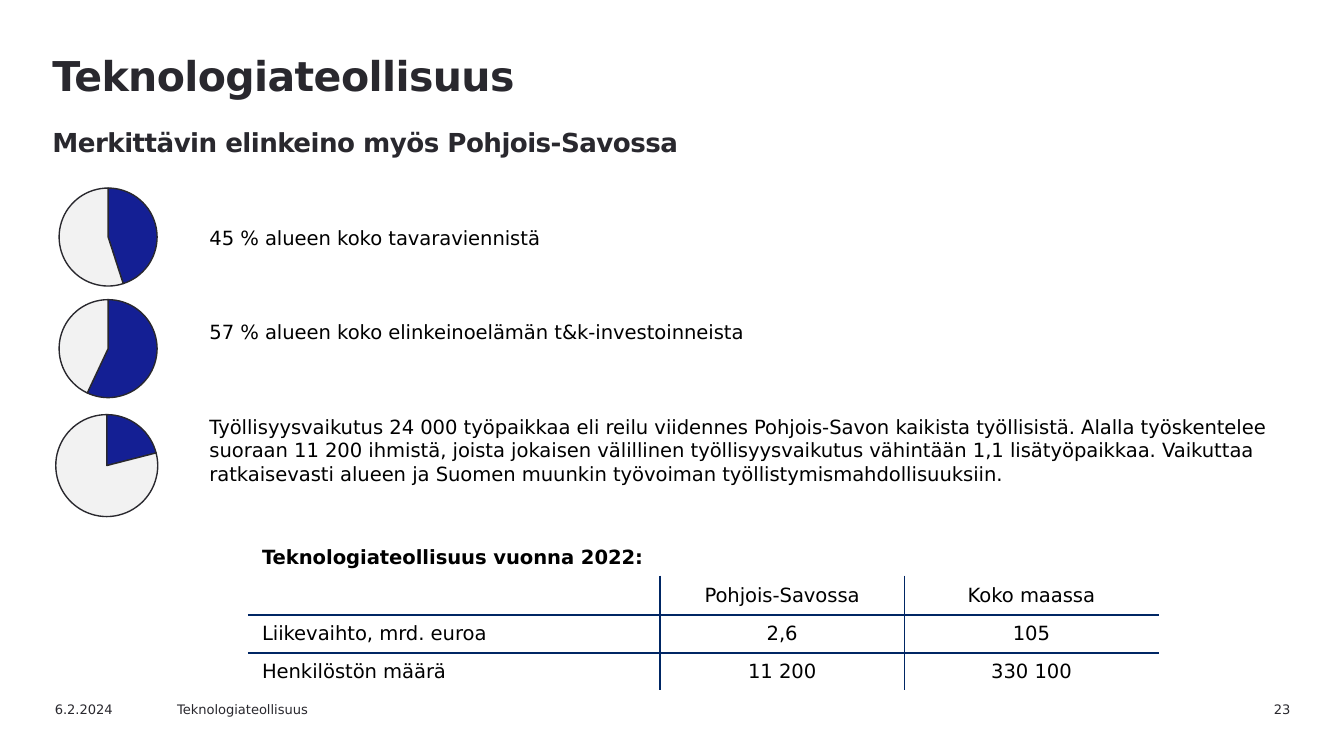
from lxml import etree
from pptx import Presentation
from pptx.chart.data import CategoryChartData as ChartData
from pptx.dml.color import RGBColor
from pptx.enum.chart import XL_CHART_TYPE as CT
from pptx.enum.text import MSO_ANCHOR as ANCHOR, MSO_AUTO_SIZE as FIT, PP_ALIGN as ALIGN
from pptx.oxml import parse_xml
from pptx.oxml.ns import nsdecls, qn
from pptx.util import Inches, Pt

FONT = "DejaVu Sans"
INK = RGBColor(0x29, 0x28, 0x2E)
BLACK = RGBColor(0x00, 0x00, 0x00)
BLUE = RGBColor(0x14, 0x1F, 0x94)
PALE = RGBColor(0xF2, 0xF2, 0xF2)
RULE = RGBColor(0x00, 0x26, 0x64)

W = Inches(10)
H = W * 9 // 16
COL, ROW = W / 100, H / 56.25

HEADING = [("Teknologiateollisuus", 22), ("Merkittävin elinkeino myös Pohjois-Savossa", 14)]
FACTS = [
    "45 % alueen koko tavaraviennistä",
    "57 % alueen koko elinkeinoelämän t&k-investoinneista",
    "Työllisyysvaikutus 24 000 työpaikkaa eli reilu viidennes Pohjois-Savon kaikista "
    "työllisistä. Alalla työskentelee suoraan 11 200 ihmistä, joista jokaisen välillinen "
    "työllisyysvaikutus vähintään 1,1 lisätyöpaikkaa. Vaikuttaa ratkaisevasti alueen ja "
    "Suomen muunkin työvoiman työllistymismahdollisuuksiin.",
]
PIES = [(45, (3.1, 12.6, 10, 10)), (57, (3.1, 20.9, 10, 10)), (21, (2.8, 29.4, 10.4, 10.4))]
FIGURES = [
    ["Teknologiateollisuus vuonna 2022:", "", ""],
    ["", "Pohjois-Savossa", "Koko maassa"],
    ["Liikevaihto, mrd. euroa", "2,6", "105"],
    ["Henkilöstön määrä", "11 200", "330 100"],
]
FOOTER = [
    ("6.2.2024", 0, 10, ALIGN.LEFT),
    ("Teknologiateollisuus", 9.1, 14.2, ALIGN.LEFT),
    ("23", 84.5, 9.4, ALIGN.RIGHT),
]


def grid(x, y, w, h):
    return int(x * COL), int(y * ROW), int(w * COL), int(h * ROW)


def set_font(font, size, color, bold=False):
    values = {"name": FONT, "size": Pt(size), "bold": bold}
    for key, value in values.items():
        setattr(font, key, value)
    font.color.rgb = color


def add_run(p, text, *style):
    r = p.add_run()
    r.text = text
    set_font(r.font, *style)
    return r


def add_heading(slide, box):
    sp = slide.shapes.title
    for key, value in zip(("left", "top", "width", "height"), grid(*box)):
        setattr(sp, key, value)
    tf = sp.text_frame
    values = {"margin_left": 0, "margin_top": 0, "margin_right": 0, "margin_bottom": 0,
              "word_wrap": True, "auto_size": FIT.NONE, "vertical_anchor": ANCHOR.TOP}
    for key, value in values.items():
        setattr(tf, key, value)
    p = tf.paragraphs[0]
    p.alignment = ALIGN.LEFT
    p.line_spacing = Pt(31)
    for i, (text, size) in enumerate(HEADING):
        if i:
            p.add_line_break()
        r = add_run(p, text, size, INK, True)
        r.font._element.set("spc", "-30")


def add_text(slide, box, texts, size, color, align=ALIGN.LEFT, gap=0):
    tf = slide.shapes.add_textbox(*grid(*box)).text_frame
    tf.word_wrap = True
    for i, text in enumerate(texts):
        p = tf.add_paragraph() if i else tf.paragraphs[0]
        p.alignment = align
        p.space_before = Pt(gap if i else 0)
        add_run(p, text, size, color)


def add_pie(slide, box, share):
    data = ChartData()
    data.categories = ["1", "2"]
    data.add_series("Series 1", (share, 100 - share))
    chart = slide.shapes.add_chart(CT.PIE, *grid(*box), data).chart
    chart.has_title = chart.has_legend = False
    set_font(chart.font, 18, INK)
    plot = chart.plots[0]
    plot.vary_by_categories = False
    for i, color in enumerate((BLUE, PALE)):
        fmt = plot.series[0].points[i].format
        fmt.fill.solid()
        fmt.fill.fore_color.rgb = color
        fmt.line.color.rgb = INK
        fmt.line.width = Pt(0.75)
    area = chart._chartSpace.chart.plotArea
    for old in area.findall(qn("c:layout")):
        area.remove(old)
    layout = parse_xml(f"<c:layout {nsdecls('c')}><c:manualLayout/></c:layout>")
    values = {"layoutTarget": "inner", "xMode": "edge", "yMode": "edge",
              "x": 0.13, "y": 0.14, "w": 0.73, "h": 0.73}
    for key, value in values.items():
        etree.SubElement(layout[0], qn(f"c:{key}")).set("val", str(value))
    area.insert(0, layout)


def add_border(cell, side):
    cell._tc.get_or_add_tcPr().append(parse_xml(
        f'<a:{side} {nsdecls("a")} w="12700"><a:solidFill><a:srgbClr val="{RULE}"/>'
        f"</a:solidFill></a:{side}>"))


def add_figures(slide, box):
    rows, cols = len(FIGURES), len(FIGURES[0])
    table = slide.shapes.add_table(rows, cols, *grid(*box)).table
    table.first_row = table.horz_banding = False
    for column, width in zip(table.columns, (30.6, 18.2, 18.9)):
        column.width = int(width * COL)
    for i, texts in enumerate(FIGURES):
        for j, text in enumerate(texts):
            cell = table.cell(i, j)
            cell.vertical_anchor = ANCHOR.MIDDLE
            sides = {"lnL": i and j, "lnR": i and j < cols - 1,
                     "lnT": i > 1, "lnB": 0 < i < rows - 1}
            for side, drawn in sides.items():
                if drawn:
                    add_border(cell, side)
            cell.fill.background()
            p = cell.text_frame.paragraphs[0]
            p.alignment = ALIGN.CENTER if j else ALIGN.LEFT
            if text:
                add_run(p, text, 10.5, BLACK, i == 0)
            else:
                p._p.get_or_add_endParaRPr().set("sz", "1050")
    table.cell(0, 0).merge(table.cell(0, cols - 1))


def add_footer(slide, box):
    x, y, _, h = box
    for text, offset, width, align in FOOTER:
        add_text(slide, (x + offset, y, width, h), [text], 7, INK, align)


def main():
    prs = Presentation()
    prs.slide_width, prs.slide_height = W, H
    slide = prs.slides.add_slide(prs.slide_layouts[5])
    add_heading(slide, (3.9, 3.1, 86.3, 9))
    add_text(slide, (14.6, 16.3, 81.9, 24.2), FACTS, 10.5, BLACK, gap=38)
    for share, box in PIES:
        add_pie(slide, box, share)
    add_figures(slide, (18.5, 40.05, 67.7, 11.4))
    add_footer(slide, (3.1, 51.7, 93.9, 1.8))
    prs.save("out.pptx")


if __name__ == "__main__":
    main()
